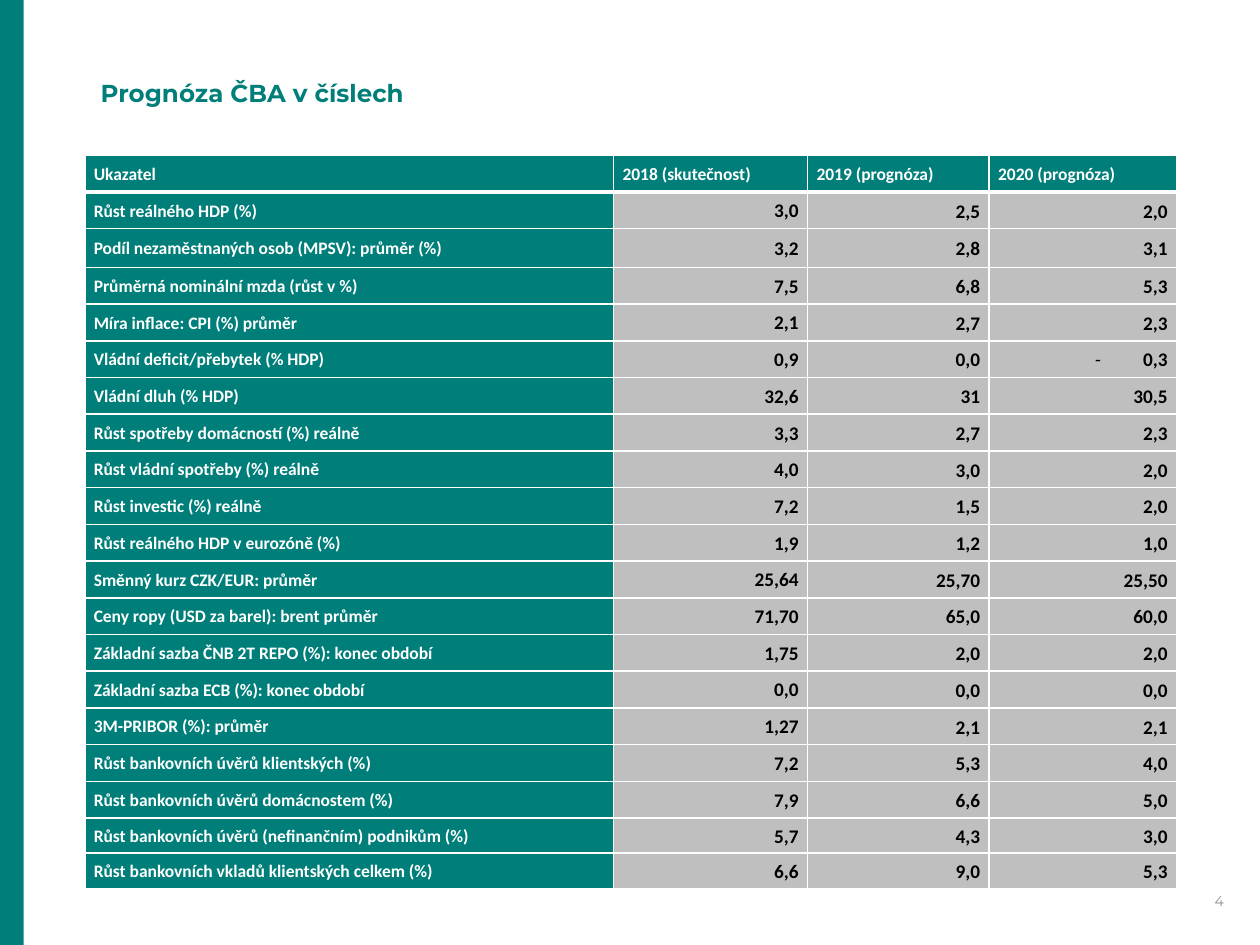
from dataclasses import dataclass

import pptx
import pptx.dml.color
import pptx.enum.shapes
import pptx.enum.text
import pptx.oxml
import pptx.oxml.ns
import pptx.util
from pptx.util import Cm

ALIGN = pptx.enum.text.PP_ALIGN
ANCHOR = pptx.enum.text.MSO_ANCHOR


@dataclass(frozen=True)
class Theme:
    teal: str = "007E79"
    grey: str = "BFBFBF"
    white: str = "FFFFFF"
    black: str = "000000"
    muted: str = "8C8C8C"
    head: str = "Montserrat"
    body: str = "Calibri"
    title: int = 14
    label: int = 10
    value: int = 11
    page: int = 8
    thin: int = 1
    thick: int = 3


THEME = Theme()

HEADS = ("Ukazatel", "2018 (skutečnost)", "2019 (prognóza)", "2020 (prognóza)")
ROWS = (
    ("Růst reálného HDP (%)", "3,0", "2,5", "2,0"),
    ("Podíl nezaměstnaných osob (MPSV): průměr (%)", "3,2", "2,8", "3,1"),
    ("Průměrná nominální mzda (růst v %)", "7,5", "6,8", "5,3"),
    ("Míra inflace: CPI (%) průměr", "2,1", "2,7", "2,3"),
    ("Vládní deficit/přebytek (% HDP)", "0,9", "0,0", "0,3"),
    ("Vládní dluh (% HDP)", "32,6", "31", "30,5"),
    ("Růst spotřeby domácností (%) reálně", "3,3", "2,7", "2,3"),
    ("Růst vládní spotřeby (%) reálně", "4,0", "3,0", "2,0"),
    ("Růst investic (%) reálně", "7,2", "1,5", "2,0"),
    ("Růst reálného HDP v eurozóně (%)", "1,9", "1,2", "1,0"),
    ("Směnný kurz CZK/EUR: průměr", "25,64", "25,70", "25,50"),
    ("Ceny ropy (USD za barel): brent průměr", "71,70", "65,0", "60,0"),
    ("Základní sazba ČNB 2T REPO (%): konec období", "1,75", "2,0", "2,0"),
    ("Základní sazba ECB (%): konec období", "0,0", "0,0", "0,0"),
    ("3M-PRIBOR (%): průměr", "1,27", "2,1", "2,1"),
    ("Růst bankovních úvěrů klientských (%)", "7,2", "5,3", "4,0"),
    ("Růst bankovních úvěrů domácnostem (%)", "7,9", "6,6", "5,0"),
    ("Růst bankovních úvěrů (nefinančním) podnikům (%)", "5,7", "4,3", "3,0"),
    ("Růst bankovních vkladů klientských celkem (%)", "6,6", "9,0", "5,3"),
)
DASHED = (5, 3)  # the 2020 deficit carries its minus as a dash bullet
WIDTHS = (10.66, 3.91, 3.66, 3.78)
HEIGHTS = (0.74, 0.74, 0.78) + (0.74,) * 15 + (0.71,) * 2


def rgb(code):
    return pptx.dml.color.RGBColor.from_string(code)


def style(par, face, size, color, bold=False):
    font = par.font
    font.name, font.size, font.bold = face, pptx.util.Pt(size), bold
    font.color.rgb = rgb(color)


def add_bar(slide, height):
    bar = slide.shapes.add_shape(
        pptx.enum.shapes.MSO_SHAPE.RECTANGLE, 0, 0, Cm(0.48), height)
    bar.shadow.inherit = False
    bar.fill.solid()
    bar.fill.fore_color.rgb = rgb(THEME.teal)
    bar.line.fill.background()


def add_text(slide, text, box, size, color, bold=False,
             align=ALIGN.LEFT, anchor=ANCHOR.TOP):
    frame = slide.shapes.add_textbox(*map(Cm, box)).text_frame
    frame.word_wrap = True
    frame.vertical_anchor = anchor
    par = frame.paragraphs[0]
    par.text = text
    par.alignment = align
    style(par, THEME.head, size, color, bold)


def add_edge(cell, side, width):
    """Draw one white border; call before the cell is filled."""
    cell._tc.get_or_add_tcPr().append(pptx.oxml.parse_xml(
        f'<a:ln{side} {pptx.oxml.ns.nsdecls("a")} w="{pptx.util.Pt(width)}">'
        f'<a:solidFill><a:srgbClr val="{THEME.white}"/></a:solidFill>'
        f'</a:ln{side}>'))


def add_dash(par):
    """Hang a dash bullet in front of the paragraph."""
    props = par._p.get_or_add_pPr()
    props.set("marL", str(Cm(0.97)))
    props.set("indent", str(Cm(-0.97)))
    names = pptx.oxml.ns.nsdecls("a")
    for part in (f'<a:buFont {names} typeface="{THEME.body}"/>',
                 f'<a:buChar {names} char="-"/>'):
        props.append(pptx.oxml.parse_xml(part))


def fill_cell(cell, text, row, col):
    label = row == 0 or col == 0
    late = row > 0 and col > 1
    cell.margin_left = cell.margin_right = Cm(0.18)
    cell.margin_top = Cm(0.02 if late else 0)
    cell.margin_bottom = 0
    cell.vertical_anchor = ANCHOR.MIDDLE
    for side in "LRTB":
        rule = (row, side) in ((0, "B"), (1, "T"))
        add_edge(cell, side, THEME.thick if rule else THEME.thin)
    cell.fill.solid()
    cell.fill.fore_color.rgb = rgb(THEME.teal if label else THEME.grey)

    par = cell.text_frame.paragraphs[0]
    par.text = text
    par.alignment = ALIGN.JUSTIFY if label else ALIGN.RIGHT
    par.line_spacing = 1.06 if late else 1.07
    if (row, col) == DASHED:
        add_dash(par)
    style(par, THEME.body, THEME.label if label else THEME.value,
          THEME.white if label else THEME.black, True)


def add_grid(slide):
    data = (HEADS,) + ROWS
    grid = slide.shapes.add_table(
        len(data), len(HEADS), Cm(1.71), Cm(3.13),
        Cm(sum(WIDTHS)), Cm(sum(HEIGHTS))).table
    for col, width in zip(grid.columns, WIDTHS):
        col.width = Cm(width)
    for row, height in zip(grid.rows, HEIGHTS):
        row.height = Cm(height)
    for i, texts in enumerate(data):
        for j, text in enumerate(texts):
            fill_cell(grid.cell(i, j), text, i, j)


def main():
    deck = pptx.Presentation()
    deck.slide_width, deck.slide_height = Cm(25.4), Cm(19.05)
    slide = deck.slides.add_slide(deck.slide_layouts[6])
    add_bar(slide, deck.slide_height)
    add_text(slide, "4", (23.95, 17.65, 0.97, 1.02), THEME.page, THEME.muted,
             align=ALIGN.RIGHT, anchor=ANCHOR.MIDDLE)
    add_text(slide, "Prognóza ČBA v číslech", (1.78, 1.45, 15.67, 0.86),
             THEME.title, THEME.teal, bold=True)
    add_grid(slide)
    deck.save("out.pptx")


if __name__ == "__main__":
    main()
